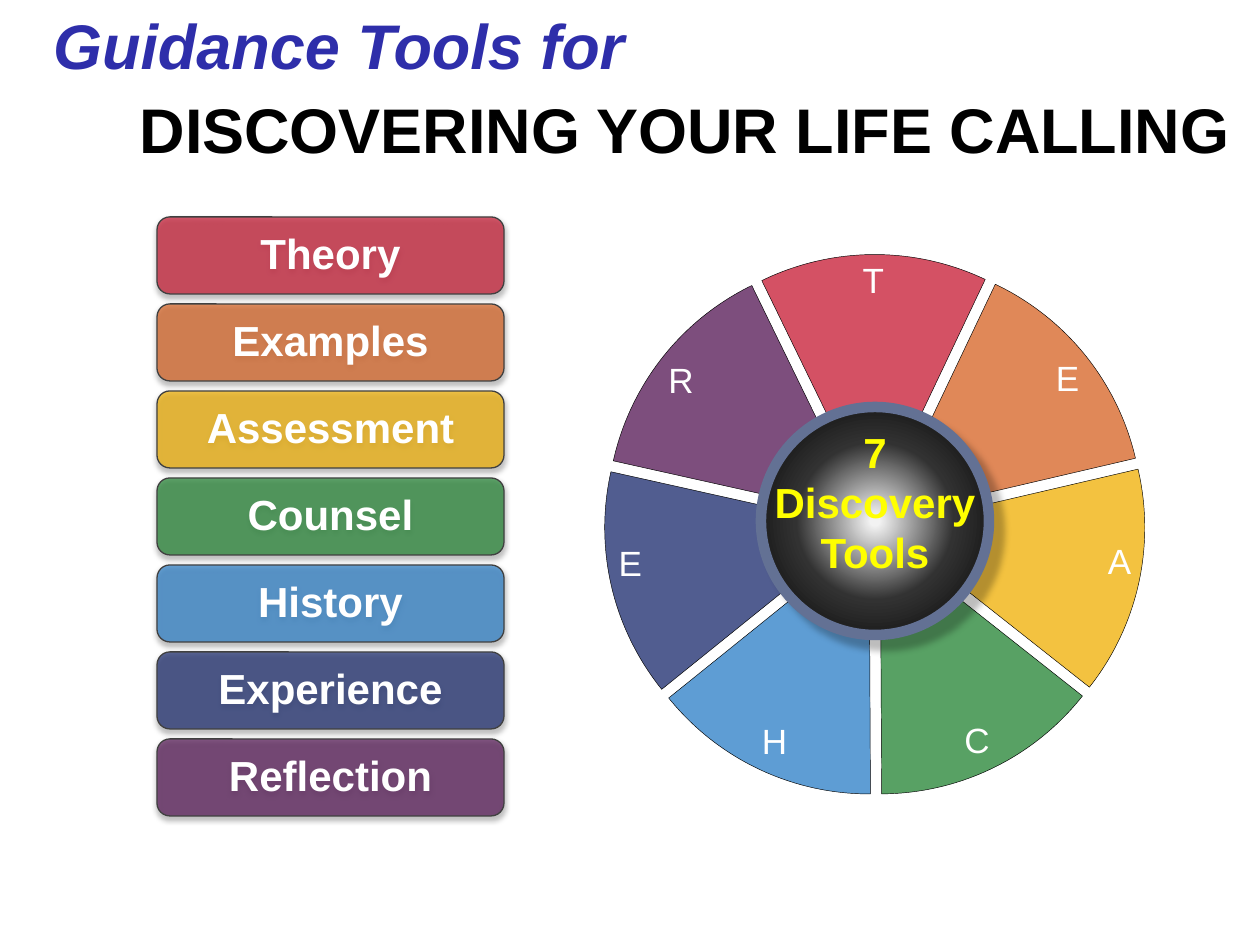
import dataclasses

import lxml.etree
import pptx
import pptx.chart.data
import pptx.dml.color
import pptx.enum.chart
import pptx.enum.shapes
import pptx.enum.text
import pptx.oxml
import pptx.oxml.ns
import pptx.util

PX = 914400 / 126


@dataclasses.dataclass(frozen=True)
class Theme:
    font: str = "Arial"
    heading_size: int = 36
    body_size: int = 24
    label_size: int = 20
    white: str = "FFFFFF"
    black: str = "000000"
    intro: str = "2E2EAA"
    outline: str = "404040"
    ring: str = "637194"
    hub_text: str = "FFFF00"
    hub_stops: tuple = ((3, "F2F2F2"), (49, "323232"), (100, "000000"))
    button_opacity: int = 70
    slice_opacity: int = 75


THEME = Theme()

TOOLS = {
    "Theory": "C61831",
    "Examples": "D66121",
    "Assessment": "EFAE00",
    "Counsel": "218231",
    "History": "297DC6",
    "Experience": "18286B",
    "Reflection": "521452",
}
HUB_LINES = ["7", "Discovery", "Tools"]


def emu(*lengths):
    return [round(length * PX) for length in lengths]


def rgb(color):
    return pptx.dml.color.RGBColor.from_string(color)


def style_font(font, size, color, bold=True, italic=False):
    font.name = THEME.font
    font.size = pptx.util.Pt(size)
    font.bold = bold
    font.italic = italic
    font.color.rgb = rgb(color)


def add_child(parent, tag, **attributes):
    values = {name: str(value) for name, value in attributes.items()}
    return lxml.etree.SubElement(parent, pptx.oxml.ns.qn(tag), values)


def set_opacity(color_element, percent):
    add_child(color_element, "a:alpha", val=percent * 1000)


def add_shadow(shape, opacity, blur, distance, angle):
    shape.shadow.inherit = False
    effects = shape._element.spPr.find(pptx.oxml.ns.qn("a:effectLst"))
    shadow = add_child(
        effects, "a:outerShdw", blurRad=pptx.util.Pt(blur),
        dist=pptx.util.Pt(distance), dir=angle * 60000, algn="ctr", rotWithShape=0)
    set_opacity(add_child(shadow, "a:srgbClr", val=THEME.black), opacity)


def fill_text(shape, lines, size, color, italic=False, wrap=True):
    frame = shape.text_frame
    frame.word_wrap = wrap
    frame.auto_size = pptx.enum.text.MSO_AUTO_SIZE.NONE
    frame.text = "\n".join(lines)
    for paragraph in frame.paragraphs:
        paragraph.alignment = pptx.enum.text.PP_ALIGN.CENTER
        style_font(paragraph.font, size, color, italic=italic)
    return frame


def add_heading(slide, left, top):
    intro = slide.shapes.add_textbox(*emu(left, top, 602, 89))
    fill_text(intro, ["Guidance Tools for"], THEME.heading_size, THEME.intro,
              italic=True, wrap=False)
    title = slide.shapes.title
    title.left, title.top, title.width, title.height = emu(left + 84, top + 84, 1126, 89)
    frame = fill_text(title, ["DISCOVERING YOUR LIFE CALLING"],
                      THEME.heading_size, THEME.black, wrap=False)
    frame.vertical_anchor = pptx.enum.text.MSO_ANCHOR.MIDDLE


def add_buttons(slide, left, top, width, height):
    gap = 10
    button_height = (height + gap) / len(TOOLS) - gap
    for index, (name, color) in enumerate(TOOLS.items()):
        button = slide.shapes.add_shape(
            pptx.enum.shapes.MSO_SHAPE.ROUNDED_RECTANGLE,
            *emu(left, top + index * (button_height + gap), width, button_height))
        button.fill.solid()
        button.fill.fore_color.rgb = rgb(color)
        set_opacity(button._element.spPr.xpath("a:solidFill/a:srgbClr")[0],
                    THEME.button_opacity)
        button.line.color.rgb = rgb(THEME.outline)
        button.line.width = pptx.util.Pt(0.75)
        add_shadow(button, 35, 3.1, 1.8, 90)
        frame = fill_text(button, [name], THEME.body_size, THEME.white)
        frame.vertical_anchor = pptx.enum.text.MSO_ANCHOR.MIDDLE
        frame.paragraphs[0].line_spacing = 0.9


def set_plot_box(chart, **box):
    plot_area = chart._chartSpace.chart.plotArea
    for old_layout in plot_area.xpath("c:layout"):
        plot_area.remove(old_layout)
    layout = pptx.oxml.parse_xml(f"<c:layout {pptx.oxml.ns.nsdecls('c')}/>")
    plot_area.insert(0, layout)
    manual = add_child(layout, "c:manualLayout")
    add_child(manual, "c:layoutTarget", val="inner")
    for side in "xy":
        add_child(manual, f"c:{side}Mode", val="edge")
    for side, fraction in box.items():
        add_child(manual, f"c:{side}", val=fraction)


def add_wheel(slide, left, top, width, height):
    data = pptx.chart.data.CategoryChartData()
    data.categories = [name[0] for name in TOOLS]
    data.add_series(" ".join(HUB_LINES), [14] * len(TOOLS))
    chart = slide.shapes.add_chart(
        pptx.enum.chart.XL_CHART_TYPE.PIE, *emu(left, top, width, height), data).chart
    chart.has_legend = False
    chart.has_title = False
    style_font(chart.font, THEME.label_size, THEME.white, bold=False)
    set_plot_box(chart, x=0.26, y=0.07, w=0.52, h=0.86)

    plot = chart.plots[0]
    plot.vary_by_categories = True
    plot.has_data_labels = True
    labels = plot.data_labels
    labels.show_category_name = True
    labels.show_value = False
    labels.show_percentage = False
    labels.position = pptx.enum.chart.XL_LABEL_POSITION.INSIDE_END
    style_font(labels.font, THEME.label_size, THEME.white, bold=False)
    pie = plot._element
    for angle in pie.xpath("c:firstSliceAng"):
        pie.remove(angle)
    add_child(pie, "c:firstSliceAng", val=334)

    series = plot.series[0]
    for index, color in enumerate(TOOLS.values()):
        point = series.points[index]
        point.format.fill.solid()
        point.format.fill.fore_color.rgb = rgb(color)
        point.format.line.color.rgb = rgb(THEME.black)
        point.format.line.width = pptx.util.Pt(0.25)
    for color_element in series._element.xpath("c:dPt/c:spPr/a:solidFill/a:srgbClr"):
        set_opacity(color_element, THEME.slice_opacity)
    explosion = pptx.oxml.parse_xml(
        f'<c:explosion {pptx.oxml.ns.nsdecls("c")} val="5"/>')
    series._element.xpath("c:dPt")[0].addprevious(explosion)


def add_hub(slide, left, top, size):
    hub = slide.shapes.add_shape(
        pptx.enum.shapes.MSO_SHAPE.OVAL, *emu(left, top, size, size))
    hub.fill.background()
    no_fill = hub._element.spPr.xpath("a:noFill")[0]
    gradient = pptx.oxml.parse_xml(
        f'<a:gradFill {pptx.oxml.ns.nsdecls("a")} rotWithShape="1"/>')
    no_fill.getparent().replace(no_fill, gradient)
    stops = add_child(gradient, "a:gsLst")
    for position, color in THEME.hub_stops:
        stop = add_child(stops, "a:gs", pos=position * 1000)
        add_child(stop, "a:srgbClr", val=color)
    center = add_child(gradient, "a:path", path="circle")
    add_child(center, "a:fillToRect", l=50000, t=50000, r=50000, b=50000)
    hub.line.color.rgb = rgb(THEME.ring)
    hub.line.width = pptx.util.Pt(6)
    add_shadow(hub, 25, 4, 8, 45)
    caption = slide.shapes.add_textbox(*emu(left - 17, top + 13, size + 34, 165))
    fill_text(caption, HUB_LINES, THEME.body_size, THEME.hub_text)


def main():
    presentation = pptx.Presentation()
    presentation.slide_width, presentation.slide_height = emu(1260, 945)
    slide = presentation.slides.add_slide(presentation.slide_layouts[5])
    add_buttons(slide, 157, 217, 347, 599)
    add_wheel(slide, 334, 210, 1040, 630)
    add_hub(slide, 761, 407, 228)
    add_heading(slide, 38, 0)
    presentation.save("out.pptx")


if __name__ == "__main__":
    main()
